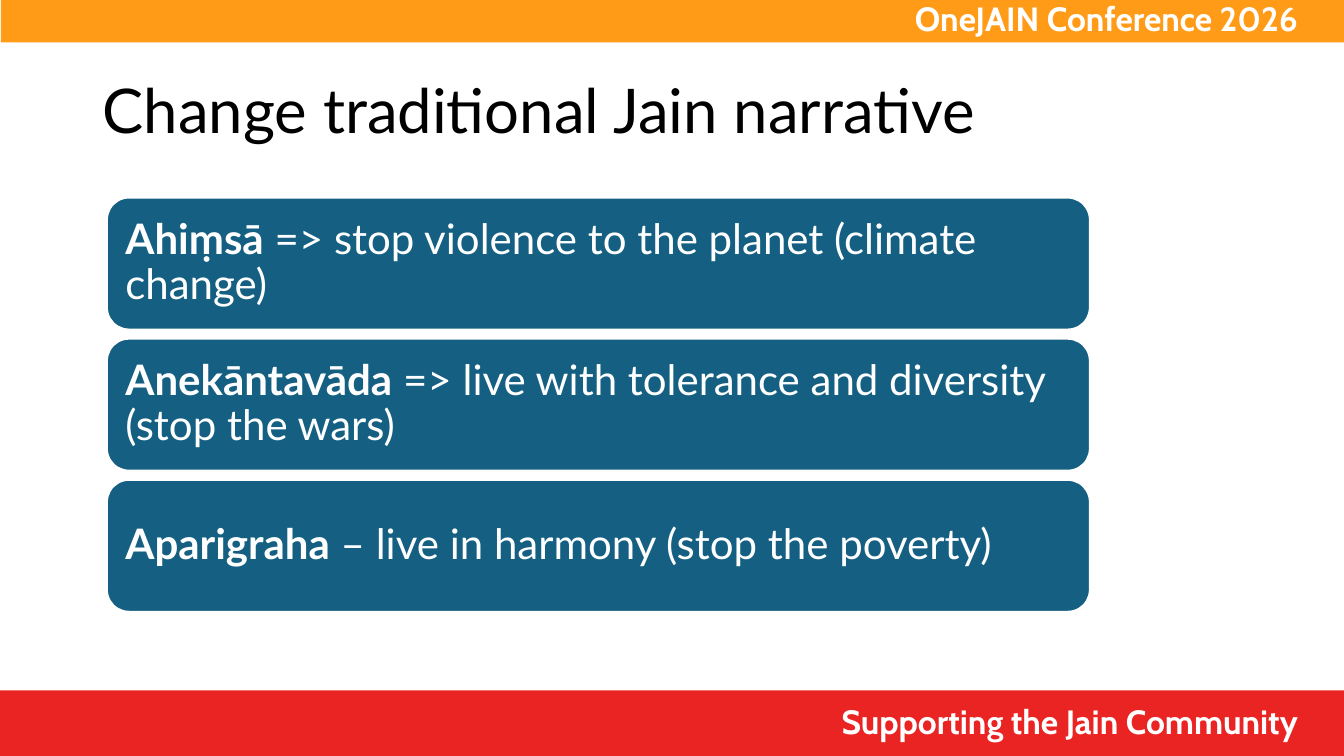
from pptx import Presentation
from pptx.dml.color import RGBColor
from pptx.enum.shapes import MSO_SHAPE
from pptx.enum.text import MSO_ANCHOR, PP_ALIGN
from pptx.util import Inches, Pt

WHITE = "FFFFFF"
PRINCIPLES = [
    ("Ahiṃsā", " => stop violence to the planet (climate change)"),
    ("Anekāntavāda", " => live with tolerance and diversity (stop the wars)"),
    ("Aparigraha", " – live in harmony (stop the poverty)"),
]


def color(value):
    """Turn a hex string into a colour."""
    return RGBColor.from_string(value)


def format_font(font, name, size, value, bold=False):
    """Set the typeface, size, colour and weight of a font."""
    font.name = name
    font.size = Pt(size)
    font.color.rgb = color(value)
    font.bold = bold


def add_box(slide, kind, left, top, width, height, fill):
    """Add a filled shape without outline or shadow."""
    shape = slide.shapes.add_shape(
        kind, Inches(left), Inches(top), Inches(width), Inches(height))
    shape.shadow.inherit = False
    shape.fill.solid()
    shape.fill.fore_color.rgb = color(fill)
    shape.line.fill.background()
    return shape


def add_text(slide, text, left, top, width, height):
    """Add a wrapping text box and return its frame and paragraph."""
    box = slide.shapes.add_textbox(
        Inches(left), Inches(top), Inches(width), Inches(height))
    frame = box.text_frame
    frame.word_wrap = True
    paragraph = frame.paragraphs[0]
    paragraph.text = text
    return frame, paragraph


def add_banner(slide, text, bar, text_area, fill):
    """Add a coloured bar with a right-aligned caption."""
    add_box(slide, MSO_SHAPE.RECTANGLE, *bar, fill)
    _, paragraph = add_text(slide, text, *text_area)
    paragraph.alignment = PP_ALIGN.RIGHT
    format_font(paragraph.runs[0].font, "Cabin", 24, WHITE, bold=True)


def add_title(slide, text):
    """Add the slide title."""
    frame, paragraph = add_text(slide, text, 0.92, 0.4, 11.5, 1.45)
    frame.vertical_anchor = MSO_ANCHOR.MIDDLE
    paragraph.line_spacing = 0.9
    format_font(paragraph.runs[0].font, "Lato", 44, "000000")


def add_principle(slide, top, term, meaning):
    """Add a rounded card with a bold term and its meaning."""
    card = add_box(slide, MSO_SHAPE.ROUNDED_RECTANGLE,
                   1.06, top, 9.75, 1.31, "156082")
    card.line.color.rgb = color(WHITE)
    card.line.width = Pt(1.5)
    frame = card.text_frame
    frame.word_wrap = True
    frame.vertical_anchor = MSO_ANCHOR.MIDDLE
    frame.margin_left = frame.margin_right = Inches(0.12)
    frame.margin_top = frame.margin_bottom = Inches(0.12)
    paragraph = frame.paragraphs[0]
    paragraph.alignment = PP_ALIGN.LEFT
    paragraph.line_spacing = 0.9
    for text, bold in ((term, True), (meaning, False)):
        run = paragraph.add_run()
        run.text = text
        format_font(run.font, "Lato", 30, WHITE, bold)


def main():
    """Build and save the slide."""
    presentation = Presentation()
    presentation.slide_width = Inches(13.33)
    presentation.slide_height = Inches(7.5)
    slide = presentation.slides.add_slide(presentation.slide_layouts[6])
    add_banner(slide, "OneJAIN Conference 2026",
               (0.01, -0.05, 13.33, 0.47), (0.09, -0.07, 12.88, 0.5), "FF9B17")
    add_banner(slide, "Supporting the Jain Community",
               (0, 6.85, 13.33, 0.65), (-0.13, 6.9, 13.1, 0.5), "EA2323")
    add_title(slide, "Change traditional Jain narrative")
    for index, (term, meaning) in enumerate(PRINCIPLES):
        add_principle(slide, 1.96 + 1.4 * index, term, meaning)
    presentation.save("out.pptx")


if __name__ == "__main__":
    main()
